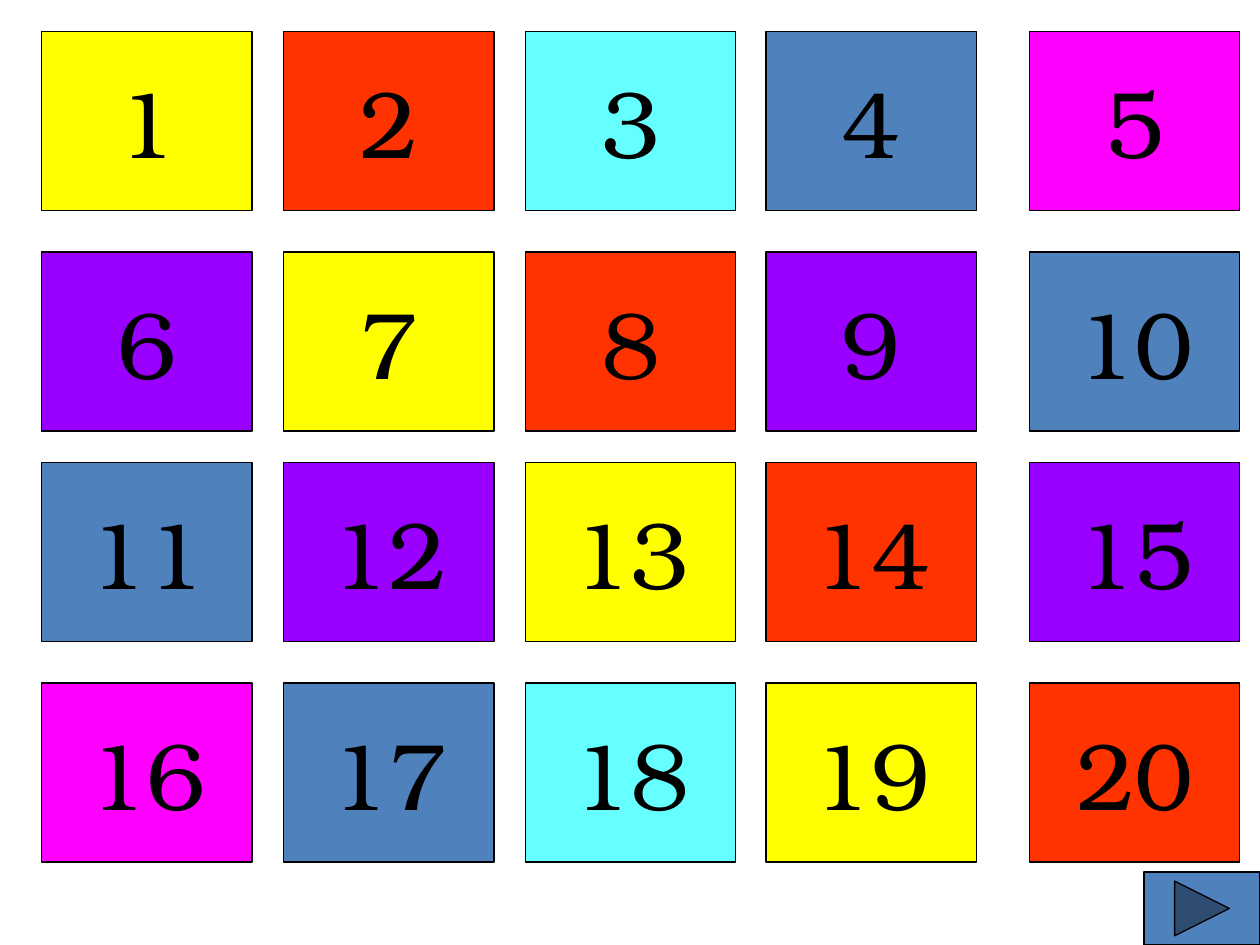
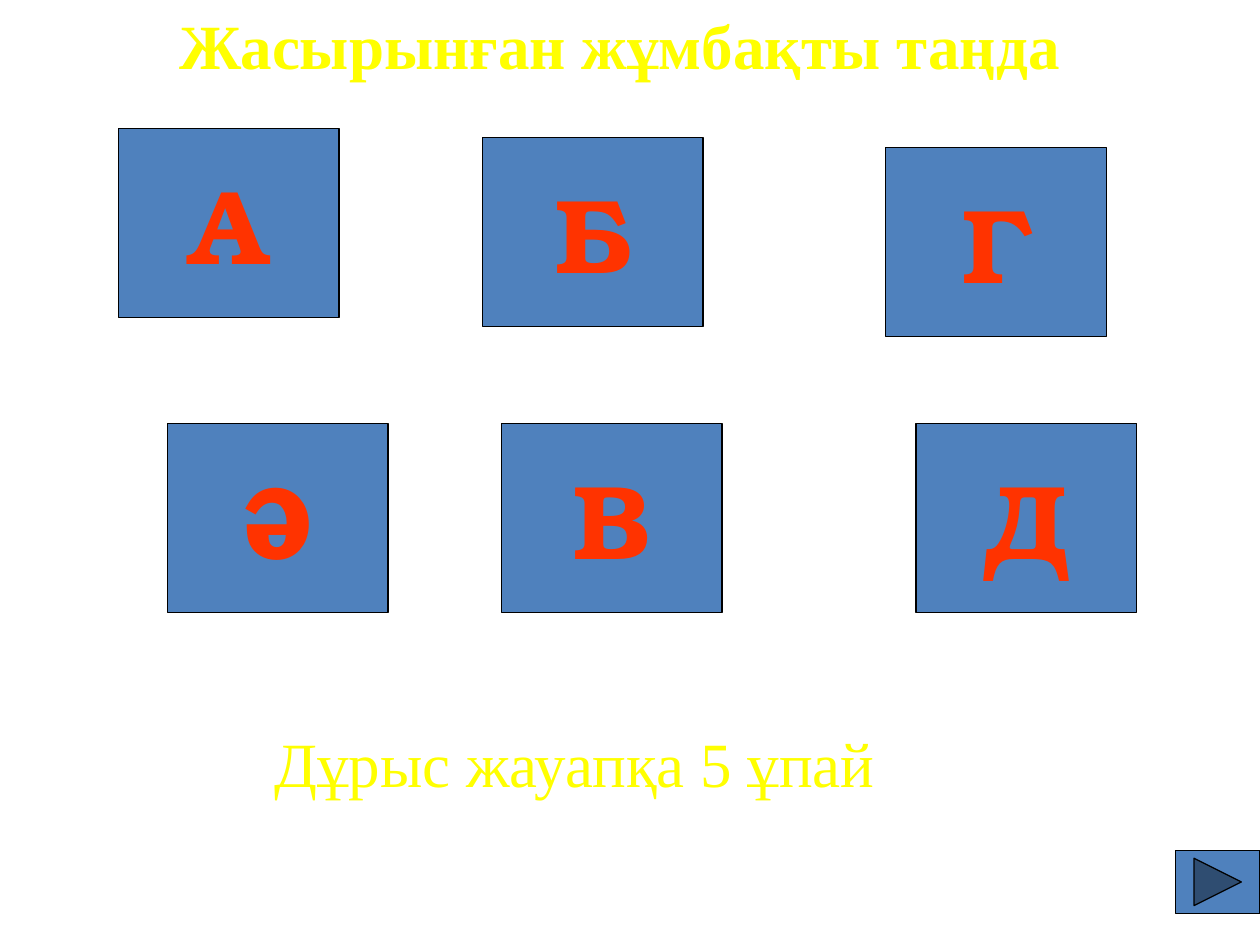
from dataclasses import dataclass

from lxml import etree
from pptx import Presentation
from pptx.dml.color import RGBColor
from pptx.enum import shapes, text
from pptx.oxml import ns
from pptx.util import Inches, Pt

BLACK = RGBColor(0x00, 0x00, 0x00)
YELLOW = RGBColor(0xFF, 0xFF, 0x00)
ORANGE = RGBColor(0xFF, 0x99, 0x33)
RED = RGBColor(0xFF, 0x33, 0x00)
CYAN = RGBColor(0x66, 0xFF, 0xFF)
BLUE = RGBColor(0x4F, 0x81, 0xBD)
MAGENTA = RGBColor(0xFF, 0x00, 0xFF)
VIOLET = RGBColor(0x99, 0x00, 0xFF)

BUTTON_FONT = "TeX Gyre Bonum"
HEADING_FONT = "Times New Roman"
BUTTON = shapes.MSO_SHAPE.ACTION_BUTTON_CUSTOM
NEXT = shapes.MSO_SHAPE.ACTION_BUTTON_FORWARD_OR_NEXT

COLUMN_LEFTS = (0.33, 2.25, 4.17, 6.08, 8.17)
ROW_TOPS = (0.25, 2, 3.67, 5.42)
NUMBER_FILLS = (
    (YELLOW, RED, CYAN, BLUE, MAGENTA),
    (VIOLET, YELLOW, RED, VIOLET, BLUE),
    (BLUE, VIOLET, YELLOW, RED, VIOLET),
    (MAGENTA, BLUE, CYAN, YELLOW, RED),
)


@dataclass(frozen=True)
class Box:
    left: float
    top: float
    width: float
    height: float

    def lengths(self) -> tuple:
        return tuple(Inches(n) for n in (self.left, self.top, self.width, self.height))


@dataclass(frozen=True)
class Letter:
    label: str
    left: float
    top: float


LETTERS = (
    Letter("А", 0.94, 1.02),
    Letter("Ә", 1.33, 3.36),
    Letter("Б", 3.83, 1.09),
    Letter("В", 3.98, 3.36),
    Letter("Г", 7.03, 1.17),
    Letter("Д", 7.27, 3.36),
)


def write_text(shape, words: str, *, font: str, size: int, color: RGBColor,
               bold: bool = False, anchor=text.MSO_ANCHOR.MIDDLE):
    frame = shape.text_frame
    frame.word_wrap = False
    frame.vertical_anchor = anchor
    paragraph = frame.paragraphs[0]
    paragraph.alignment = text.PP_ALIGN.CENTER
    run = paragraph.add_run()
    run.text = words
    run.font.name = font
    run.font.size = Pt(size)
    run.font.bold = bold
    run.font.color.rgb = color
    return run


def add_button(slide, box: Box, fill: RGBColor, kind=BUTTON):
    button = slide.shapes.add_shape(kind, *box.lengths())
    button.shadow.inherit = False
    button.fill.solid()
    button.fill.fore_color.rgb = fill
    button.line.color.rgb = BLACK
    button.line.width = Pt(0.75)
    return button


def apply_glow_style(run) -> None:
    """Give the run a black outline and a yellow-to-orange gradient from its centre."""
    properties = run.font.fill and run.font._element
    properties.remove(properties.find(ns.qn("a:solidFill")))
    outline = etree.fromstring(
        f'<a:ln {ns.nsdecls("a")} w="{Pt(1)}"><a:solidFill>'
        f'<a:srgbClr val="{BLACK}"/></a:solidFill></a:ln>')
    gradient = etree.fromstring(
        f'<a:gradFill {ns.nsdecls("a")}><a:gsLst>'
        f'<a:gs pos="0"><a:srgbClr val="{YELLOW}"/></a:gs>'
        f'<a:gs pos="100000"><a:srgbClr val="{ORANGE}"/></a:gs></a:gsLst>'
        '<a:path path="rect"><a:fillToRect l="50000" t="50000" r="50000" b="50000"/>'
        '</a:path></a:gradFill>')
    properties.insert(0, outline)
    properties.insert(1, gradient)


def add_heading(slide, words: str, left: float, top: float, bold: bool = False) -> None:
    heading = slide.shapes.add_textbox(*Box(left, top, 8.5, 0.92).lengths())
    run = write_text(heading, words, font=HEADING_FONT, size=36, color=YELLOW,
                     bold=bold, anchor=text.MSO_ANCHOR.TOP)
    apply_glow_style(run)


def build_number_board(slide) -> None:
    for column, left in enumerate(COLUMN_LEFTS):
        for row, top in enumerate(ROW_TOPS):
            button = add_button(slide, Box(left, top, 1.67, 1.42), NUMBER_FILLS[row][column])
            number = row * len(COLUMN_LEFTS) + column + 1
            write_text(button, str(number), font=BUTTON_FONT, size=54, color=BLACK)
    add_button(slide, Box(9.08, 6.92, 0.92, 0.58), BLUE, NEXT)


def build_riddle_choice(slide) -> None:
    add_heading(slide, "Жасырынған жұмбақты таңда", 0.67, 0, bold=True)
    for letter in LETTERS:
        button = add_button(slide, Box(letter.left, letter.top, 1.75, 1.5), BLUE)
        write_text(button, letter.label, font=BUTTON_FONT, size=60, color=RED, bold=True)
    add_heading(slide, "Дұрыс жауапқа 5 ұпай", 0.31, 5.7)
    add_button(slide, Box(9.33, 6.75, 0.67, 0.5), BLUE, NEXT)


def main() -> None:
    presentation = Presentation()
    presentation.slide_width = Inches(10)
    presentation.slide_height = Inches(7.5)
    blank = presentation.slide_layouts[6]
    for build in (build_number_board, build_riddle_choice):
        build(presentation.slides.add_slide(blank))
    presentation.save("out.pptx")


if __name__ == "__main__":
    main()
